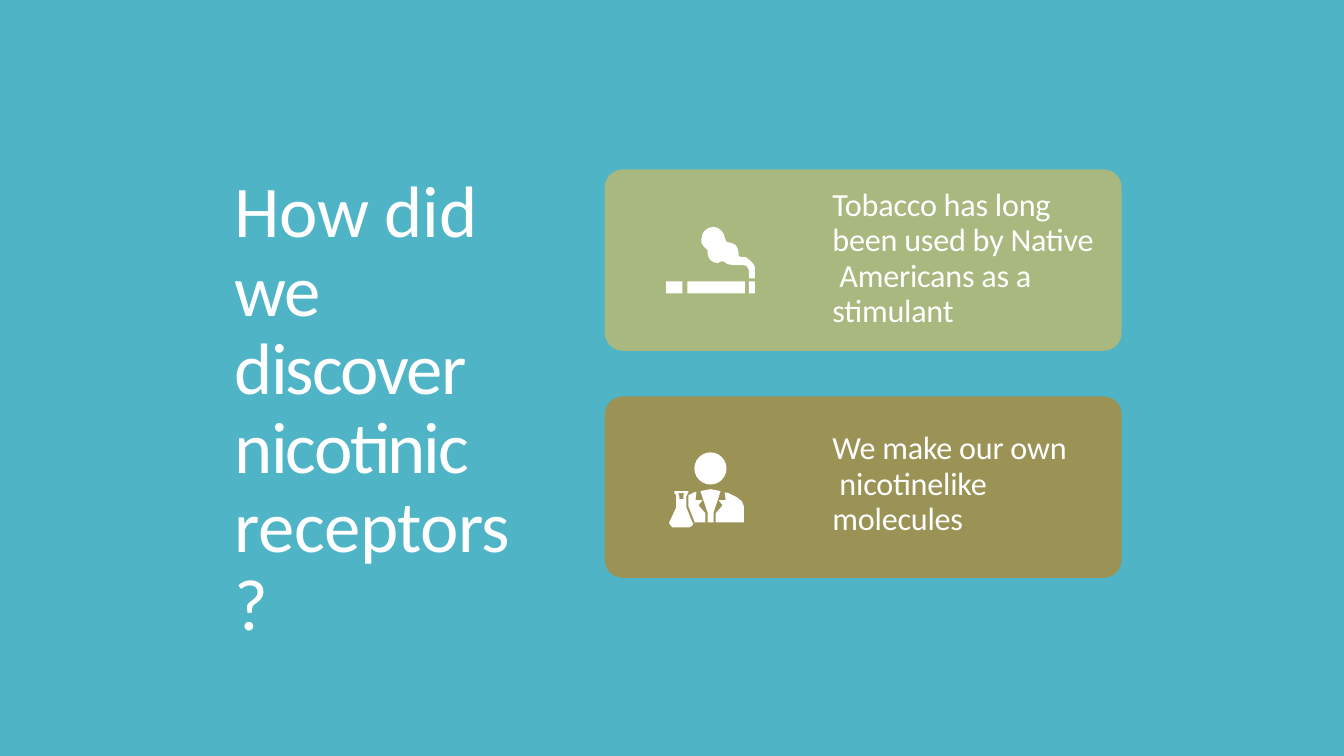
from pptx import Presentation
from pptx import util as u
from pptx.dml.color import RGBColor
from pptx.enum import shapes

ICON_UNIT = u.Cm(0.0254)
CARD_LEFT, CARD_TOP = 15.24, 4.27
CARD_WIDTH, CARD_HEIGHT, CARD_PITCH = 13.03, 4.57, 5.72
TEXT_LEFT = 20.98

# Icon outlines, in icon units from the top left corner of their card
CIGARETTE = [[(left, 111), (right, 111), (right, 123), (left, 123)]
             for left, right in ((61, 77), (82, 139), (143, 149))]
SMOKE = [(149, 108), (149, 97), (147, 93), (144, 90), (140, 87), (136, 87),
         (133, 86), (133, 84), (132, 79), (130, 75), (126, 73), (121, 72),
         (120, 70), (118, 64), (116, 61), (112, 58), (108, 57), (103, 58),
         (99, 61), (97, 64), (96, 69), (96, 73), (98, 76), (102, 80),
         (102, 83), (103, 87), (105, 90), (108, 92), (112, 93), (116, 91),
         (119, 92), (122, 94), (127, 95), (138, 95), (141, 96), (143, 100),
         (143, 108)]
FLASK = [(88, 126), (87, 125), (81, 110), (81, 99), (82, 97), (83, 95),
         (83, 94), (69, 94), (69, 96), (71, 98), (71, 110), (64, 125),
         (64, 126), (67, 130), (84, 130), (87, 128)]
FLASK_NECK = [(79, 96), (78, 98), (78, 102), (74, 102), (74, 99), (73, 96)]
LAPEL = [(100, 125), (100, 116), (93, 108), (97, 103), (90, 103), (91, 95)]
LEFT_COAT = LAPEL + [(89, 95), (83, 98), (83, 109), (89, 124), (89, 125)]
RIGHT_COAT = [(210 - x, y) for x, y in LAPEL] + [
    (123, 96), (127, 98), (131, 100), (136, 104), (138, 109), (138, 125)]
SHIRT = [(115, 94), (110, 93), (105, 92), (100, 93), (95, 94),
         (102, 115), (102, 125), (108, 125), (108, 115)]


def color(hex_string):
    return RGBColor.from_string(hex_string)


class SlideBuilder:
    font = "Calibri"
    white = "FFFFFF"

    def __init__(self, slide):
        self.slide = slide

    def background(self, fill):
        self.slide.background.fill.solid()
        self.slide.background.fill.fore_color.rgb = color(fill)

    def paint(self, shape, fill):
        shape.shadow.inherit = False
        shape.fill.solid()
        shape.fill.fore_color.rgb = color(fill)
        shape.line.fill.background()

    def preset(self, kind, left, top, width, height, fill):
        shape = self.slide.shapes.add_shape(
            kind, u.Cm(left), u.Cm(top), u.Cm(width), u.Cm(height))
        self.paint(shape, fill)
        return shape

    def card(self, top, fill):
        card = self.preset(shapes.MSO_SHAPE.ROUNDED_RECTANGLE, CARD_LEFT, top,
                           CARD_WIDTH, CARD_HEIGHT, fill)
        card.adjustments[0] = 0.1

    def icon(self, top, outlines):
        """Draw closed outlines as one shape on the card that starts at top."""
        builder = self.slide.shapes.build_freeform(*outlines[0][0], scale=ICON_UNIT)
        for number, outline in enumerate(outlines):
            if number:
                builder.move_to(*outline[0])
            builder.add_line_segments(outline[1:], close=True)
        self.paint(builder.convert_to_shape(u.Cm(CARD_LEFT), u.Cm(top)), self.white)

    def text(self, left, top, width, height, pieces, size, line_spacing,
             space_before, inset):
        """Write one paragraph from (words, letter spacing in points) pieces."""
        box = self.slide.shapes.add_textbox(
            u.Cm(left), u.Cm(top), u.Cm(width), u.Cm(height))
        frame = box.text_frame
        frame.word_wrap = True
        frame.margin_left = frame.margin_right = frame.margin_bottom = 0
        frame.margin_top = u.Cm(inset)
        paragraph = frame.paragraphs[0]
        paragraph.line_spacing = line_spacing
        paragraph.space_before = u.Pt(space_before)
        for words, spacing in pieces:
            for number, line in enumerate(words.split("\n")):
                if number:
                    paragraph.add_line_break()
                run = paragraph.add_run()
                run.text = line
                run.font.name = self.font
                run.font.size = u.Pt(size)
                run.font.color.rgb = color(self.white)
                run.font._element.set("spc", str(round(spacing * 100)))

    def card_text(self, top, width, height, words):
        self.text(TEXT_LEFT, top, width, height, [(words, -0.2)], size=23,
                  line_spacing=0.92, space_before=3.4, inset=0.13)


def main():
    presentation = Presentation()
    presentation.slide_width = u.Cm(33.87)
    presentation.slide_height = u.Cm(19.05)
    builder = SlideBuilder(
        presentation.slides.add_slide(presentation.slide_layouts[6]))

    builder.background("50B4C7")
    builder.text(5.92, 4.09, 7.52, 10.19,
                 [("How did ", -0.3), ("we discover nicotinic ", -1.4),
                  ("receptors?", -0.4)],
                 size=52, line_spacing=u.Pt(56.2), space_before=8, inset=0.28)

    tobacco_top, molecules_top = (CARD_TOP + CARD_PITCH * row for row in range(2))
    builder.card(tobacco_top, "A8B87E")
    builder.icon(tobacco_top, CIGARETTE + [SMOKE])
    builder.card_text(4.6, 6.8, 3.73,
                      "Tobacco has long been used by Native\n Americans as a stimulant")

    builder.card(molecules_top, "9B9255")
    builder.icon(molecules_top, [FLASK, FLASK_NECK])
    builder.preset(shapes.MSO_SHAPE.OVAL, 17.5, 11.4, 0.81, 0.81, builder.white)
    builder.icon(molecules_top, [LEFT_COAT, SHIRT, RIGHT_COAT])
    builder.card_text(10.74, 6, 2.82, "We make our own\n nicotinelike molecules")

    presentation.save("out.pptx")


if __name__ == "__main__":
    main()
